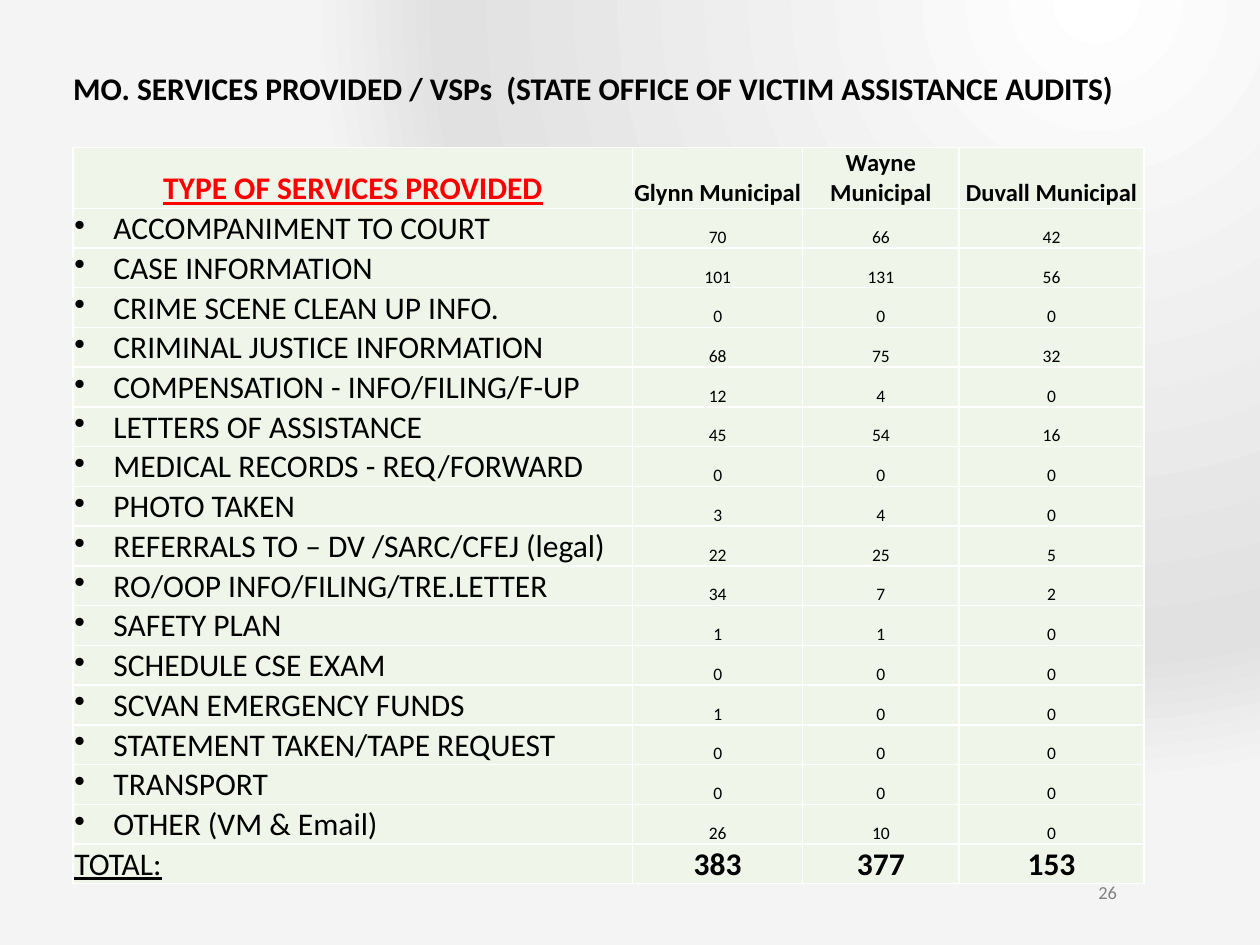
import pptx
import pptx.util
import pptx.dml.color
import pptx.enum.text
import pptx.oxml
import pptx.oxml.ns
from lxml import etree

Pt = pptx.util.Pt
ALIGN = pptx.enum.text.PP_ALIGN
ANCHOR = pptx.enum.text.MSO_ANCHOR

TITLE = "MO. SERVICES PROVIDED / VSPs  (STATE OFFICE OF VICTIM ASSISTANCE AUDITS)"
PAGE_NUMBER = "26"
HEADER = ("TYPE OF SERVICES PROVIDED", "Glynn Municipal", "Wayne Municipal", "Duvall Municipal")
SERVICES = [
    ("ACCOMPANIMENT TO COURT", 70, 66, 42),
    ("CASE INFORMATION", 101, 131, 56),
    ("CRIME SCENE CLEAN UP INFO.", 0, 0, 0),
    ("CRIMINAL JUSTICE INFORMATION", 68, 75, 32),
    ("COMPENSATION - INFO/FILING/F-UP", 12, 4, 0),
    ("LETTERS OF ASSISTANCE", 45, 54, 16),
    ("MEDICAL RECORDS - REQ/FORWARD", 0, 0, 0),
    ("PHOTO TAKEN", 3, 4, 0),
    ("REFERRALS TO – DV /SARC/CFEJ (legal)", 22, 25, 5),
    ("RO/OOP INFO/FILING/TRE.LETTER", 34, 7, 2),
    ("SAFETY PLAN", 1, 1, 0),
    ("SCHEDULE CSE EXAM", 0, 0, 0),
    ("SCVAN EMERGENCY FUNDS", 1, 0, 0),
    ("STATEMENT TAKEN/TAPE REQUEST", 0, 0, 0),
    ("TRANSPORT", 0, 0, 0),
    ("OTHER (VM & Email)", 26, 10, 0),
]
TOTAL = ("TOTAL:", 383, 377, 153)

THEME = {
    "font": "Calibri",
    "text": "000000",
    "accent": "FF0000",
    "muted": "808080",
    "cell": "EFF5E8",
    "border": "FFFFFF",
    "background": ((0, "FFFFFF"), (83, "E1E1E1"), (100, "F4F4F4")),
    "large": 18,
    "heading": 14,
    "page": 10.5,
    "count": 10,
}

COLUMN_WIDTHS = (319.7, 97.2, 89.3, 105.8)
HEADER_HEIGHT, ROW_HEIGHT = 32.4, 21.6
TABLE_LEFT, TABLE_TOP = 41.8, 84.2
BULLET_INDENT = 22.3


def style_text(paragraph, size, color=THEME["text"], bold=False, underline=False, align=ALIGN.CENTER):
    paragraph.alignment = align
    for run in paragraph.runs:
        font = run.font
        font.name = THEME["font"]
        font.size = Pt(size)
        font.bold = bold
        font.underline = underline
        font.color.rgb = pptx.dml.color.RGBColor.from_string(color)


def add_bullet(paragraph):
    properties = paragraph._p.get_or_add_pPr()
    properties.set("marL", str(Pt(BULLET_INDENT)))
    properties.set("indent", str(-Pt(BULLET_INDENT)))
    etree.SubElement(properties, pptx.oxml.ns.qn("a:buChar")).set("char", "•")


def format_cell(cell):
    cell.fill.solid()
    cell.fill.fore_color.rgb = pptx.dml.color.RGBColor.from_string(THEME["cell"])
    cell.vertical_anchor = ANCHOR.BOTTOM
    cell.margin_left = cell.margin_right = cell.margin_top = Pt(0.72)
    cell.margin_bottom = Pt(0)
    for index, side in enumerate("LRTB"):
        line = pptx.oxml.parse_xml(
            f'<a:ln{side} {pptx.oxml.ns.nsdecls("a")} w="{Pt(1)}"><a:solidFill>'
            f'<a:srgbClr val="{THEME["border"]}"/></a:solidFill></a:ln{side}>'
        )
        cell._tc.get_or_add_tcPr().insert(index, line)


def set_background(slide):
    slide.background.fill.solid()
    properties = slide.element.find(".//" + pptx.oxml.ns.qn("p:bgPr"))
    stops = "".join(
        f'<a:gs pos="{position * 1000}"><a:srgbClr val="{color}"/></a:gs>'
        for position, color in THEME["background"]
    )
    gradient = pptx.oxml.parse_xml(
        f'<a:gradFill {pptx.oxml.ns.nsdecls("a")} rotWithShape="1"><a:gsLst>{stops}</a:gsLst>'
        '<a:path path="circle"><a:fillToRect l="75000" t="100000" r="0" b="300000"/></a:path></a:gradFill>'
    )
    properties.replace(properties[0], gradient)


def add_text(slide, text, left, top, width, height, size, **style):
    shape = slide.shapes.add_textbox(Pt(left), Pt(top), Pt(width), Pt(height))
    shape.text_frame.word_wrap = True
    shape.text_frame.text = text
    style_text(shape.text_frame.paragraphs[0], size, **style)
    return shape


def add_services_table(slide):
    rows = [HEADER, *SERVICES, TOTAL]
    last = len(rows) - 1
    heights = [HEADER_HEIGHT] + [ROW_HEIGHT] * last
    table = slide.shapes.add_table(
        len(rows), len(HEADER), Pt(TABLE_LEFT), Pt(TABLE_TOP), Pt(sum(COLUMN_WIDTHS)), Pt(sum(heights))
    ).table
    table.first_row = table.horz_banding = False
    for column, width in zip(table.columns, COLUMN_WIDTHS):
        column.width = Pt(width)
    for row_index, values in enumerate(rows):
        table.rows[row_index].height = Pt(heights[row_index])
        for column_index, value in enumerate(values):
            cell = table.cell(row_index, column_index)
            format_cell(cell)
            cell.text_frame.text = str(value)
            paragraph = cell.text_frame.paragraphs[0]
            is_label = column_index == 0
            if row_index == 0:
                size = THEME["large"] if is_label else THEME["heading"]
                color = THEME["accent"] if is_label else THEME["text"]
                style_text(paragraph, size, color, bold=True, underline=is_label)
            elif row_index == last:
                align = ALIGN.LEFT if is_label else ALIGN.CENTER
                style_text(paragraph, THEME["large"], bold=not is_label, underline=is_label, align=align)
            elif is_label:
                add_bullet(paragraph)
                style_text(paragraph, THEME["large"], align=ALIGN.LEFT)
            else:
                style_text(paragraph, THEME["count"])


def main():
    presentation = pptx.Presentation()
    presentation.slide_width, presentation.slide_height = Pt(720), Pt(540)
    slide = presentation.slides.add_slide(presentation.slide_layouts[6])
    set_background(slide)
    add_services_table(slide)
    page = add_text(slide, PAGE_NUMBER, 612, 504, 41.8, 12.2, THEME["page"], color=THEME["muted"])
    page.text_frame.vertical_anchor = ANCHOR.MIDDLE
    title = add_text(slide, TITLE, 30.2, 36, 617.8, 28.8, THEME["large"], bold=True)
    title.text_frame.auto_size = pptx.enum.text.MSO_AUTO_SIZE.SHAPE_TO_FIT_TEXT
    presentation.save("out.pptx")


if __name__ == "__main__":
    main()
